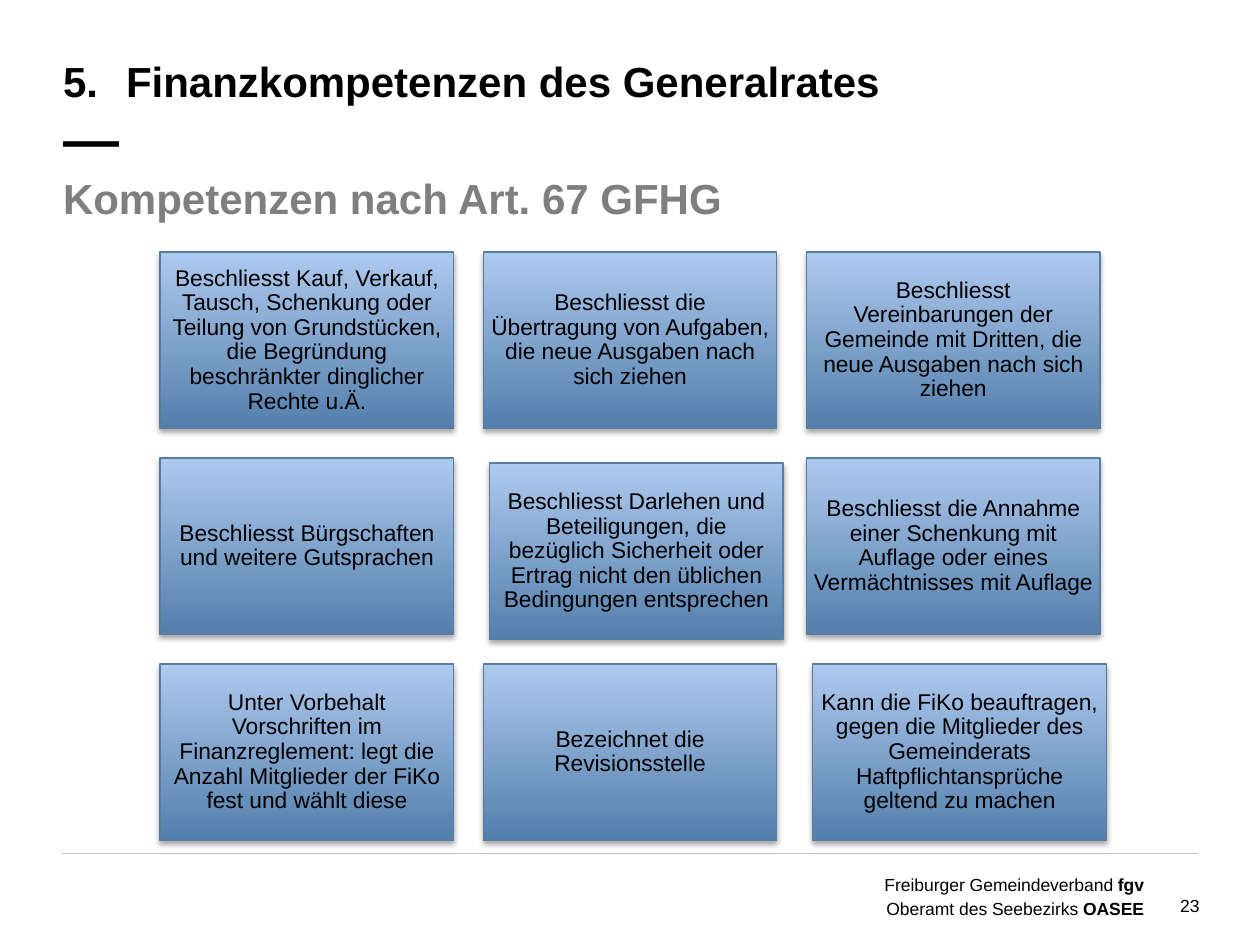
from lxml import etree
from pptx import Presentation
from pptx import util as u
from pptx.dml.color import RGBColor
from pptx.enum import shapes, text
from pptx.oxml.ns import qn

BLACK = RGBColor(0x00, 0x00, 0x00)
GREY = RGBColor(0x7F, 0x7F, 0x7F)
RULE_GREY = RGBColor(0xC0, 0xC0, 0xC0)
DEEP_BLUE = RGBColor(0x53, 0x7F, 0xAB)
PALE_BLUE = RGBColor(0xAE, 0xC9, 0xEE)
EDGE_BLUE = RGBColor(0x59, 0x7C, 0x9F)

LEFT, CENTER, RIGHT = text.PP_ALIGN.LEFT, text.PP_ALIGN.CENTER, text.PP_ALIGN.RIGHT

COMPETENCES = [
    ["Beschliesst Kauf, Verkauf, Tausch, Schenkung oder Teilung von Grundstücken, "
     "die Begründung beschränkter dinglicher Rechte u.Ä.",
     "Beschliesst die Übertragung von Aufgaben, die neue Ausgaben nach sich ziehen",
     "Beschliesst Vereinbarungen der Gemeinde mit Dritten, die neue Ausgaben "
     "nach sich ziehen"],
    ["Beschliesst Bürgschaften und weitere Gutsprachen",
     "Beschliesst Darlehen und Beteiligungen, die bezüglich Sicherheit oder Ertrag "
     "nicht den üblichen Bedingungen entsprechen",
     "Beschliesst die Annahme einer Schenkung mit Auflage oder eines "
     "Vermächtnisses mit Auflage"],
    ["Unter Vorbehalt Vorschriften im Finanzreglement: legt die Anzahl Mitglieder "
     "der FiKo fest und wählt diese",
     "Bezeichnet die Revisionsstelle",
     "Kann die FiKo beauftragen, gegen die Mitglieder des Gemeinderats "
     "Haftpflichtansprüche geltend zu machen"],
]
GRID_LEFT, GRID_TOP = 1.27, 2.0
COLUMN_STEP, ROW_STEP = 5.13 / 2, 3.27 / 2
NUDGES = {(1, 1): (0.05, 0.04), (2, 2): (0.05, 0)}


def add_span(para, words, size=10, color=BLACK, bold=False):
    span = para.add_run()
    span.text = words
    span.font.name = "Arial"
    span.font.size = u.Pt(size)
    span.font.bold = bold
    span.font.color.rgb = color


class SlideBuilder:
    def __init__(self, page):
        self.page = page

    def frame(self, box, inset=0.0, anchor=text.MSO_ANCHOR.TOP):
        frame = box.text_frame
        frame.word_wrap = True
        frame.vertical_anchor = anchor
        frame.margin_left = frame.margin_right = u.Inches(inset)
        frame.margin_top = frame.margin_bottom = u.Inches(inset)
        return frame

    def text_box(self, place, lines, align=LEFT, spacing=None):
        """Each line is a list of (words, format) pairs; returns the paragraphs."""
        box = self.page.shapes.add_textbox(*map(u.Inches, place))
        frame = self.frame(box)
        for index, line in enumerate(lines):
            para = frame.add_paragraph() if index else frame.paragraphs[0]
            para.alignment = align
            if spacing:
                para.line_spacing = u.Pt(spacing)
            for words, style in line:
                add_span(para, words, **style)
        return frame.paragraphs

    def title(self, place, words):
        para = self.text_box(place, [[(words, dict(size=24, bold=True))]], spacing=37)[0]
        tabs = etree.SubElement(para._p.get_or_add_pPr(), qn("a:tabLst"))
        etree.SubElement(tabs, qn("a:tab"), pos=str(u.Inches(0.5)), algn="l")
        para.add_line_break()
        add_span(para, "—", size=32, bold=True)

    def card(self, place, words):
        box = self.page.shapes.add_shape(shapes.MSO_SHAPE.RECTANGLE, *map(u.Inches, place))
        box.fill.gradient()
        box.fill.gradient_angle = 90
        for stop, color in zip(box.fill.gradient_stops, (DEEP_BLUE, PALE_BLUE)):
            stop.color.rgb = color
        box.line.color.rgb = EDGE_BLUE
        box.line.width = u.Pt(0.75)
        self.soft_shadow(box)
        para = self.frame(box, 0.05, text.MSO_ANCHOR.MIDDLE).paragraphs[0]
        para.alignment = CENTER
        para.line_spacing = 0.9
        add_span(para, words, size=13)

    def soft_shadow(self, box):
        box.shadow.inherit = False
        effects = box._element.spPr.find(qn("a:effectLst"))
        shadow = etree.SubElement(
            effects, qn("a:outerShdw"), blurRad=str(u.Pt(3.1)), dist=str(u.Pt(1.8)),
            dir="5400000", rotWithShape="0")
        color = etree.SubElement(shadow, qn("a:srgbClr"), val=str(BLACK))
        etree.SubElement(color, qn("a:alpha"), val="35000")

    def rule(self, left, right, top):
        line = self.page.shapes.add_connector(
            shapes.MSO_CONNECTOR.STRAIGHT, *map(u.Inches, (left, top, right, top)))
        line.line.color.rgb = RULE_GREY
        line.line.width = u.Pt(0.25)
        etree.SubElement(line._element.spPr, qn("a:effectLst"))


def main():
    deck = Presentation()
    deck.slide_width, deck.slide_height = u.Inches(10), u.Inches(7.5)
    builder = SlideBuilder(deck.slides.add_slide(deck.slide_layouts[6]))

    # Footer
    builder.text_box((9.08, 7.1, 0.44, 0.17), [[("23", {})]], align=RIGHT)
    builder.text_box(
        (6.91, 6.92, 2.17, 0.35),
        [[("Freiburger Gemeindeverband ", {}), ("fgv", dict(bold=True))],
         [("Oberamt des Seebezirks ", {}), ("OASEE", dict(bold=True))]],
        align=RIGHT, spacing=13.4)
    builder.rule(0.49, 9.51, 6.77)

    # Headings
    builder.title((0.5, 0.33, 9.01, 1.04), "5.\tFinanzkompetenzen des Generalrates")
    builder.text_box(
        (0.5, 1.37, 9.01, 0.4),
        [[("Kompetenzen nach Art. 67 GFHG", dict(size=24, color=GREY, bold=True))]])

    # Grid of competences
    for row, entries in enumerate(COMPETENCES):
        for column, words in enumerate(entries):
            right, down = NUDGES.get((row, column), (0, 0))
            left = GRID_LEFT + column * COLUMN_STEP + right
            top = GRID_TOP + row * ROW_STEP + down
            builder.card((left, top, 2.33, 1.4), words)

    deck.save("out.pptx")


if __name__ == "__main__":
    main()
